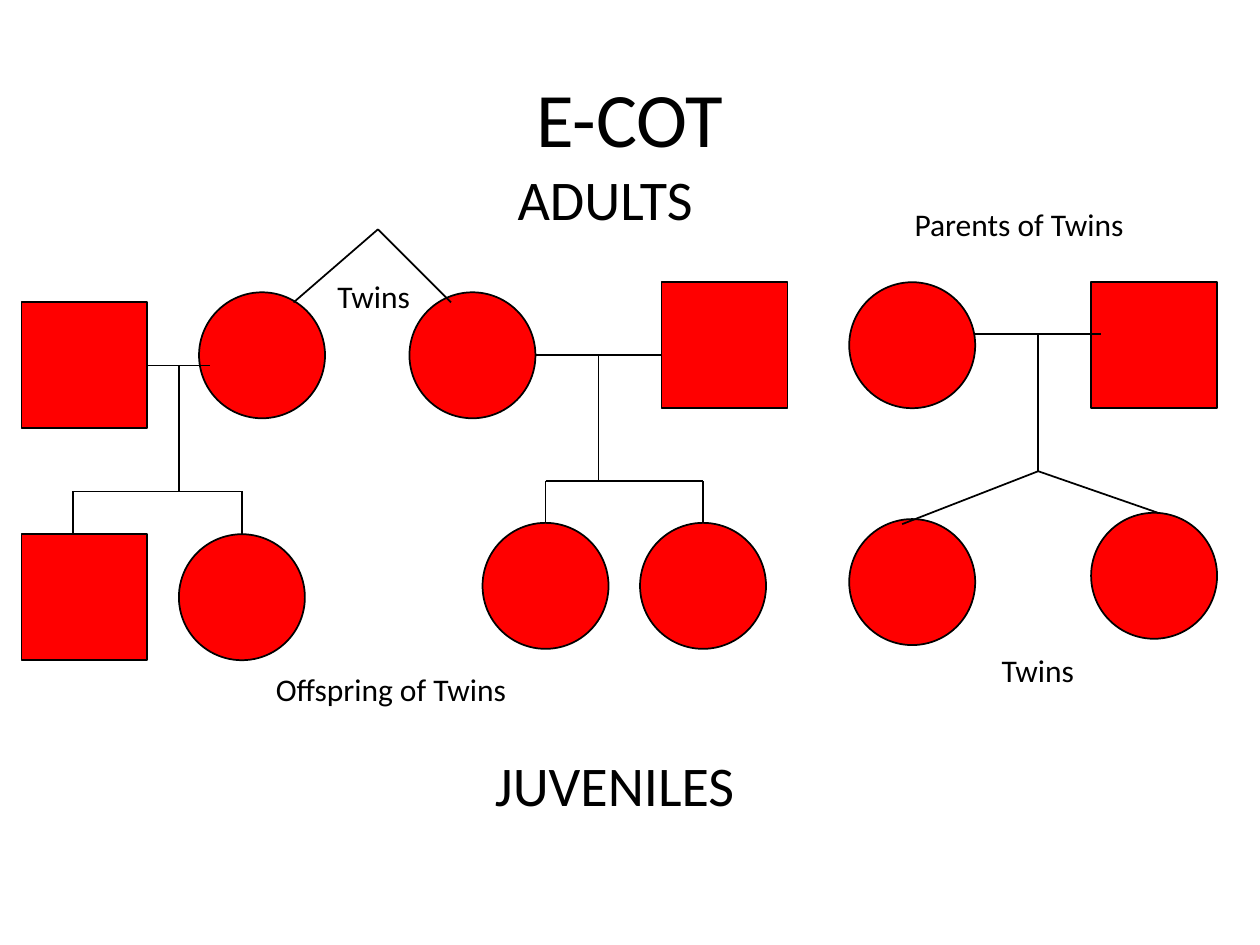
from dataclasses import dataclass

from lxml import etree
from pptx import Presentation
from pptx import util as u
from pptx.dml.color import RGBColor
from pptx.enum import shapes, text
from pptx.oxml import ns


@dataclass(frozen=True)
class Theme:
    font: str = "Calibri"
    ink: RGBColor = RGBColor(0, 0, 0)
    person: RGBColor = RGBColor(255, 0, 0)
    title_size: int = 44
    generation_size: int = 32
    label_size: int = 18
    line_width: int = 1


THEME = Theme()
PERSON_SIZE = u.Inches(1)


def write(frame, words, size=THEME.label_size, align=None, wrap=False):
    frame.word_wrap = wrap
    paragraph = frame.paragraphs[0]
    paragraph.alignment = align
    run = paragraph.add_run()
    run.text = words
    run.font.name = THEME.font
    run.font.size = u.Pt(size)
    run.font.color.rgb = THEME.ink


def draw_line(slide, *ends):
    line = slide.shapes.add_connector(
        shapes.MSO_CONNECTOR.STRAIGHT, *[u.Inches(end) for end in ends])
    line.line.color.rgb = THEME.ink
    line.line.width = u.Pt(THEME.line_width)
    etree.SubElement(line._element.spPr, ns.qn("a:effectLst"))
    return line


prs = Presentation()
prs.slide_width = u.Inches(10)
prs.slide_height = u.Inches(7.5)
pedigree = prs.slides.add_slide(prs.slide_layouts[5])

title = pedigree.shapes.title
title.left, title.top = u.Inches(0.5), u.Inches(0.3)
title.width, title.height = u.Inches(9), u.Inches(1.25)
title.text_frame.vertical_anchor = text.MSO_ANCHOR.MIDDLE
write(title.text_frame, "E-COT", size=THEME.title_size,
      align=text.PP_ALIGN.CENTER, wrap=True)

FEMALE = shapes.MSO_SHAPE.OVAL
MALE = shapes.MSO_SHAPE.RECTANGLE
family = {}
for role, sex, left, top in [
    ("left twin", FEMALE, 1.58, 2.32),
    ("right twin", FEMALE, 3.25, 2.32),
    ("left husband", MALE, 0.17, 2.4),
    ("right husband", MALE, 5.25, 2.24),
    ("son", MALE, 0.17, 4.24),
    ("daughter", FEMALE, 1.42, 4.24),
    ("elder niece", FEMALE, 3.83, 4.15),
    ("younger niece", FEMALE, 5.08, 4.15),
    ("mother", FEMALE, 6.74, 2.24),
    ("father", MALE, 8.66, 2.24),
    ("first young twin", FEMALE, 6.74, 4.12),
    ("second young twin", FEMALE, 8.66, 4.07),
]:
    person = pedigree.shapes.add_shape(
        sex, u.Inches(left), u.Inches(top), PERSON_SIZE, PERSON_SIZE)
    person.shadow.inherit = False
    person.fill.solid()
    person.fill.fore_color.rgb = THEME.person
    person.line.color.rgb = THEME.ink
    person.line.width = u.Pt(THEME.line_width)
    family[role] = person

left_marriage = draw_line(pedigree, 1.17, 2.9, 1.67, 2.9)
left_marriage.begin_connect(family["left husband"], 3)
for marriage_left, marriage_right, marriage_y in [(4.25, 5.25, 2.82), (7.74, 8.74, 2.65)]:
    draw_line(pedigree, marriage_left, marriage_y, marriage_right, marriage_y)

for descent_x, marriage_y, branch_y in [
    (1.42, 2.9, 3.9), (4.75, 2.82, 3.82), (8.24, 2.65, 3.74),
]:
    draw_line(pedigree, descent_x, marriage_y, descent_x, branch_y)

for first_x, last_x, sibling_y, child_y, children in [
    (0.58, 1.92, 3.9, 4.24, (None, "daughter")),
    (4.33, 5.58, 3.82, 4.15, ("elder niece", "younger niece")),
]:
    draw_line(pedigree, first_x, sibling_y, last_x, sibling_y)
    for child_x, child in zip((first_x, last_x), children):
        drop = draw_line(pedigree, child_x, sibling_y, child_x, child_y)
        if child:
            drop.end_connect(family[child], 0)

for apex_x, apex_y, twin_ends in [
    (3, 1.82, [(2.33, 2.4), (3.58, 2.4)]),
    (8.24, 3.74, [(7.16, 4.16), (9.19, 4.07)]),
]:
    for twin_x, twin_y in twin_ends:
        draw_line(pedigree, apex_x, apex_y, twin_x, twin_y)

for words, left, top, width, height, size in [
    ("Twins", 2.58, 2.15, 0.78, 0.4, THEME.label_size),
    ("Offspring of Twins", 2.09, 5.27, 2.05, 0.4, THEME.label_size),
    ("Parents of Twins", 7.16, 1.58, 1.88, 0.4, THEME.label_size),
    ("Twins", 7.85, 5.12, 0.78, 0.4, THEME.label_size),
    ("ADULTS", 4.01, 1.26, 1.64, 0.64, THEME.generation_size),
    ("JUVENILES", 3.83, 5.91, 2.12, 0.64, THEME.generation_size),
]:
    label = pedigree.shapes.add_textbox(
        u.Inches(left), u.Inches(top), u.Inches(width), u.Inches(height))
    label.text_frame.auto_size = text.MSO_AUTO_SIZE.SHAPE_TO_FIT_TEXT
    write(label.text_frame, words, size=size)

prs.save("out.pptx")
